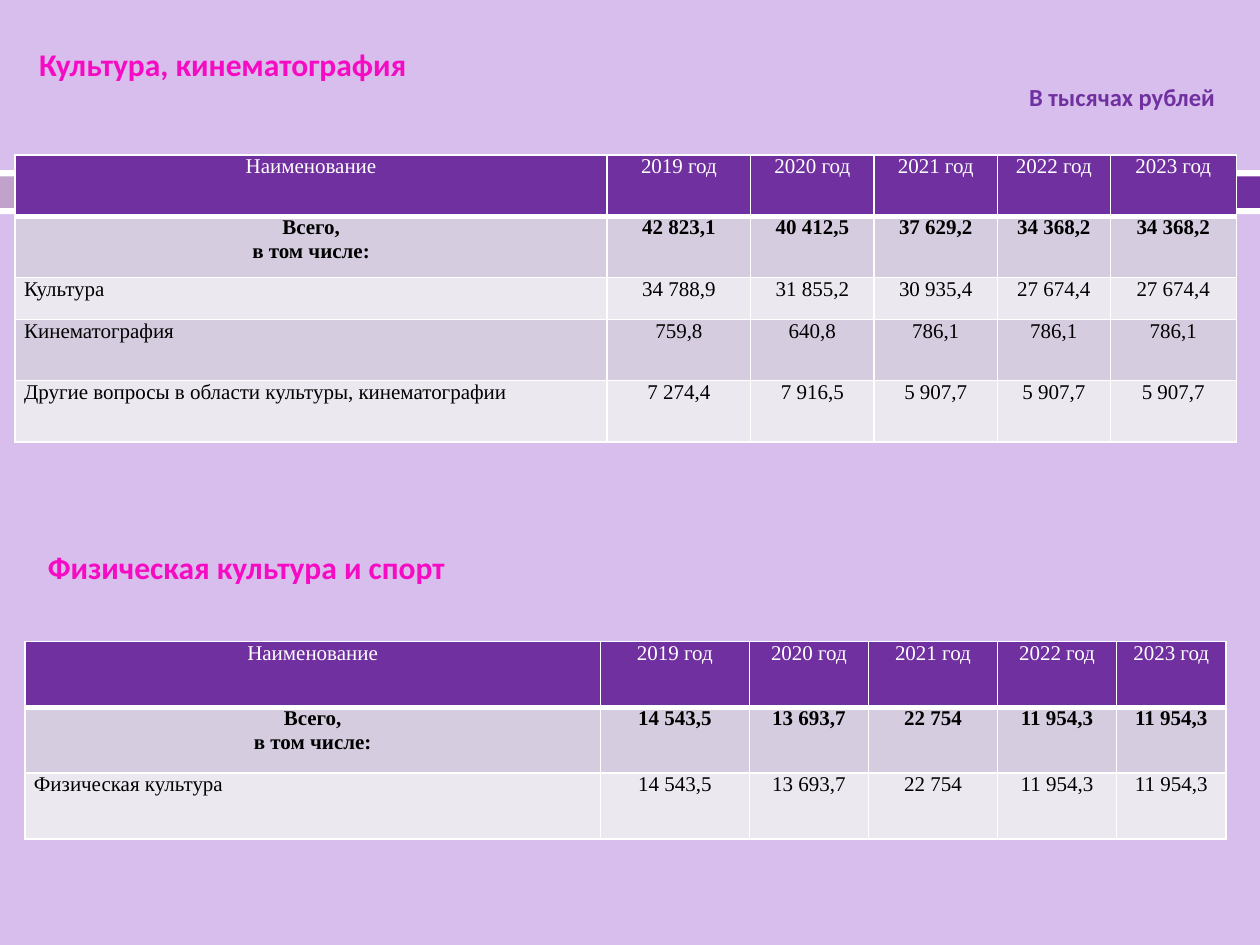
"""Build a budget slide with spending tables for culture and for sport."""
from lxml.etree import SubElement
from pptx import Presentation
from pptx.dml.color import RGBColor
from pptx.enum.shapes import MSO_SHAPE as Shape
from pptx.enum.text import MSO_ANCHOR as Anchor, MSO_AUTO_SIZE as AutoSize, PP_ALIGN as Align
from pptx.oxml.ns import qn
from pptx.util import Pt

PURPLE, PINK, WHITE, BLACK = "7030A0", "F60AC3", "FFFFFF", "000000"
BAND_FILLS = ["D5CDDF", "EBE8F0"]
HEADER = ["Наименование"] + [f"{year} год" for year in range(2019, 2024)]
TOTAL = "Всего,\nв том числе:"


def paint(target, color):
    target.solid()
    target.fore_color.rgb = RGBColor.from_string(color)


def write(frame, text, font, size, color, bold, align):
    for index, line in enumerate(text.split("\n")):
        para = frame.add_paragraph() if index else frame.paragraphs[0]
        para.alignment = align
        span = para.add_run()
        span.text = line
        span.font.name = font
        span.font.size = Pt(size)
        span.font.bold = bold
        paint(span.font.fill, color)


deck = Presentation()
deck.slide_width, deck.slide_height = Pt(720), Pt(540)
page = deck.slides.add_slide(deck.slide_layouts[5])
paint(page.background.fill, "D8BEEC")

for left, top, width, height, color in [
    (0, 97.2, 720, 25.2, WHITE),
    (0, 100.8, 41.8, 18, "C0A2CA"),
    (46.8, 100.8, 673.2, 18, PURPLE),
]:
    stripe = page.shapes.add_shape(Shape.RECTANGLE, Pt(left), Pt(top), Pt(width), Pt(height))
    stripe.shadow.inherit = False
    paint(stripe.fill, color)
    stripe.line.fill.background()

title = page.shapes.title
unit_box = page.shapes.add_textbox(0, 0, 0, 0)
sport_box = page.shapes.add_textbox(0, 0, 0, 0)
for box, left, top, width, height, text, size, color, wrap, fit in [
    (title, 15.1, 22.3, 226.1, 29.1, "Культура, кинематография", 18, PINK, False, AutoSize.SHAPE_TO_FIT_TEXT),
    (unit_box, 581, 43.2, 130.3, 33.8, "В тысячах рублей", 14, PURPLE, True, AutoSize.NONE),
    (sport_box, 20.2, 309.6, 243.4, 29.1, "Физическая культура и спорт", 18, PINK, False, AutoSize.SHAPE_TO_FIT_TEXT),
]:
    box.left, box.top, box.width, box.height = Pt(left), Pt(top), Pt(width), Pt(height)
    frame = box.text_frame
    frame.word_wrap = wrap
    frame.auto_size = fit
    frame.vertical_anchor = Anchor.TOP
    write(frame, text, "Calibri", size, color, True, Align.LEFT)

culture_rows = [
    HEADER,
    [TOTAL, "42 823,1", "40 412,5", "37 629,2", "34 368,2", "34 368,2"],
    ["Культура", "34 788,9", "31 855,2", "30 935,4", "27 674,4", "27 674,4"],
    ["Кинематография", "759,8", "640,8", "786,1", "786,1", "786,1"],
    ["Другие вопросы в области культуры, кинематографии", "7 274,4", "7 916,5", "5 907,7", "5 907,7", "5 907,7"],
]
sport_rows = [
    HEADER,
    [TOTAL, "14 543,5", "13 693,7", "22 754", "11 954,3", "11 954,3"],
    ["Физическая культура", "14 543,5", "13 693,7", "22 754", "11 954,3", "11 954,3"],
]

for left, top, widths, heights, rows in [
    (8.6, 88.6, [338.4, 82, 70.5, 70.5, 64.5, 72], [35, 35, 24, 35, 35], culture_rows),
    (14.2, 366.5, [329, 85, 68.2, 73.6, 68.2, 62.4], [37.7] * 3, sport_rows),
]:
    grid = page.shapes.add_table(
        len(rows), len(widths), Pt(left), Pt(top), Pt(sum(widths)), Pt(sum(heights))
    ).table
    for column, width in zip(grid.columns, widths):
        column.width = Pt(width)
    for row_index, (values, height) in enumerate(zip(rows, heights)):
        grid.rows[row_index].height = Pt(height)
        is_header = row_index == 0
        for column_index, value in enumerate(values):
            cell = grid.cell(row_index, column_index)
            cell.margin_left = cell.margin_right = Pt(5.2)
            cell.margin_top = cell.margin_bottom = 0
            is_label = column_index == 0 and row_index > 1
            write(
                cell.text_frame, value, "Times New Roman", 12,
                WHITE if is_header else BLACK, row_index == 1,
                Align.JUSTIFY if is_label else Align.CENTER,
            )
            properties = cell._tc.get_or_add_tcPr()
            for side in ["lnL", "lnR", "lnT", "lnB"]:
                thickness = 3 if is_header and side == "lnB" else 1
                border = SubElement(properties, qn(f"a:{side}"), w=str(Pt(thickness)))
                border_fill = SubElement(border, qn("a:solidFill"))
                SubElement(border_fill, qn("a:srgbClr"), val=WHITE)
            paint(cell.fill, PURPLE if is_header else BAND_FILLS[(row_index - 1) % 2])

deck.save("out.pptx")
